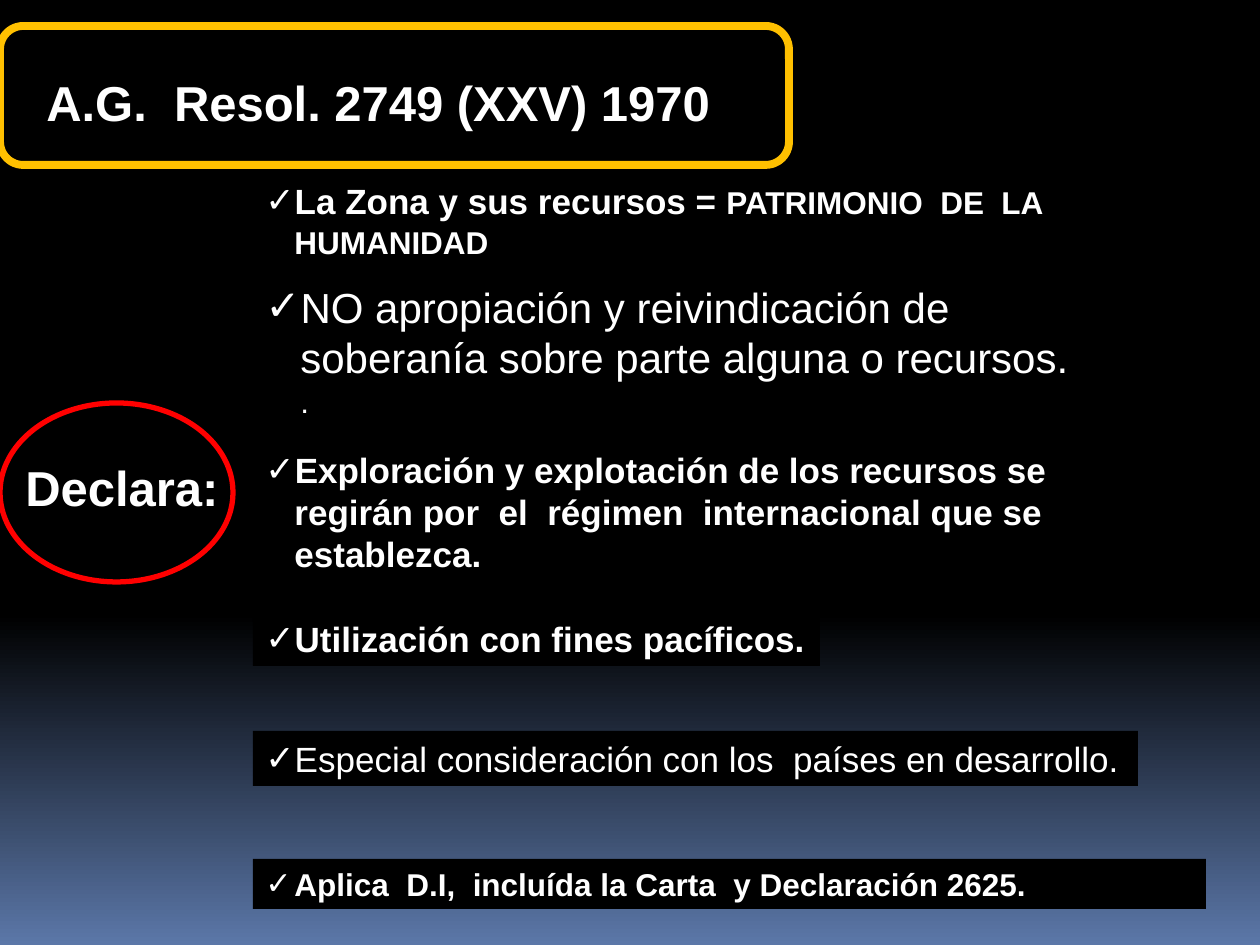
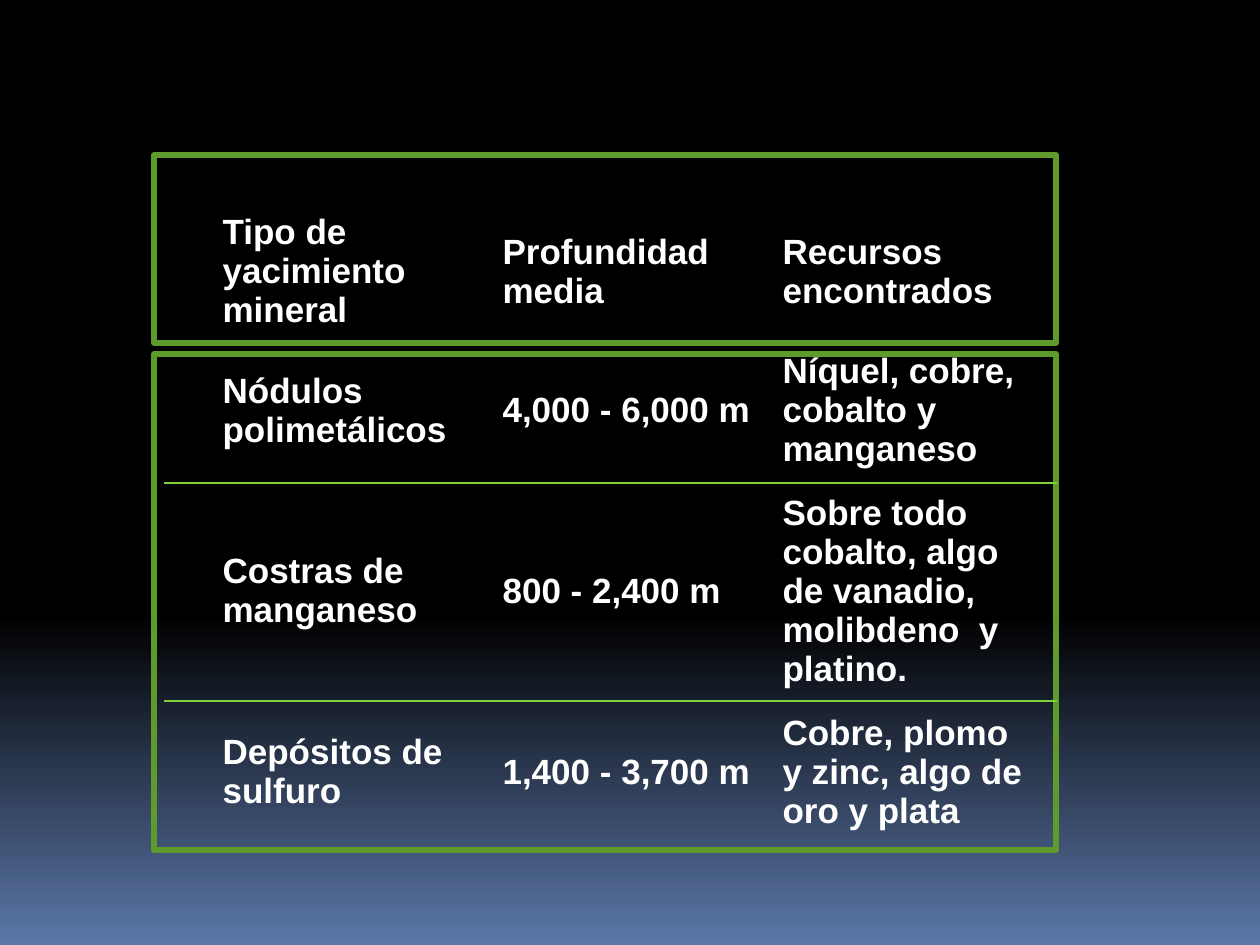
from lxml import etree
from pptx import Presentation
from pptx.dml.color import RGBColor
from pptx.enum.shapes import MSO_CONNECTOR, MSO_SHAPE
from pptx.enum.text import MSO_ANCHOR, PP_ALIGN
from pptx.oxml.ns import qn
from pptx.util import Emu, Pt

# Shared look
BLACK = RGBColor(0x00, 0x00, 0x00)
WHITE = RGBColor(0xFF, 0xFF, 0xFF)
HORIZON_BLUE = RGBColor(0x5B, 0x77, 0xA8)
GOLD = RGBColor(0xFF, 0xC0, 0x00)
RED = RGBColor(0xFF, 0x00, 0x00)
FRAME_GREEN = RGBColor(0x5E, 0x9B, 0x2C)
RULE_GREEN = RGBColor(0x7F, 0xD1, 0x3B)
FONT = "Arial"
LEFT, MIDDLE, TOP = PP_ALIGN.LEFT, MSO_ANCHOR.MIDDLE, MSO_ANCHOR.TOP
RECT, ROUNDED, OVAL = MSO_SHAPE.RECTANGLE, MSO_SHAPE.ROUNDED_RECTANGLE, MSO_SHAPE.OVAL
STRAIGHT = MSO_CONNECTOR.STRAIGHT
PX_PER_INCH = 126
LINE_HEIGHT = 1.2
NO_TABLE_STYLE = "{2D5ABB26-0587-4C30-8999-92F81FD0307C}"

# Content: box, paragraphs as lists of (text, size), then format
STATEMENT_LEFT = 253
STATEMENTS = [
    ((175, 980, 92), [[("La Zona y sus recursos = ", 20),
                       ("PATRIMONIO  DE  LA  HUMANIDAD", 18)]], {}),
    ((275, 1007, 152), [[("NO apropiación y reivindicación de", 24)],
                        [("soberanía sobre parte alguna o recursos.", 24)],
                        [(".", 18)]], {"bold": False, "indent": 35}),
    ((442, 853, 140), [[("Exploración y explotación de los recursos se", 20)],
                       [("regirán por  el  régimen  internacional que se", 20)],
                       [("establezca.", 20)]], {"fill": BLACK}),
    ((611, 567, 55), [[("Utilización con fines pacíficos.", 20)]], {"fill": BLACK}),
    ((731, 885, 55), [[("Especial consideración con los  países en desarrollo.", 20)]],
     {"bold": False, "fill": BLACK}),
    ((859, 953, 50), [[("Aplica  D.I,  incluída la Carta  y Declaración 2625.", 18)]],
     {"fill": BLACK}),
]
DEPOSITS = [
    ("Tipo de yacimiento mineral", "Profundidad media", "Recursos encontrados"),
    ("Nódulos polimetálicos", "4,000 - 6,000 m", "Níquel, cobre, cobalto y manganeso"),
    ("Costras de manganeso", "800 - 2,400 m",
     "Sobre todo cobalto, algo de vanadio, molibdeno  y platino."),
    ("Depósitos de sulfuro", "1,400 - 3,700 m", "Cobre, plomo y zinc, algo de oro y plata"),
]
ROW_HEIGHTS = (139, 138, 223, 139)
COLUMN_WIDTH = 280


def px(length):
    return Emu(round(length * 914400 / PX_PER_INCH))


def px_all(*lengths):
    return [px(length) for length in lengths]


def write(paragraph, runs, bold=True, color=WHITE, indent=0, bullet=False, spacing=None):
    """Fill a paragraph with (text, size) runs."""
    paragraph.alignment = LEFT
    if spacing:
        paragraph.line_spacing = Pt(spacing)
    for text, size in runs:
        run = paragraph.add_run()
        run.text = text
        run.font.name = FONT
        run.font.size = Pt(size)
        run.font.bold = bold
        run.font.color.rgb = color
    properties = paragraph._p.get_or_add_pPr()
    properties.set("marL", str(px(indent)))
    properties.set("indent", str(-px(indent) if bullet else 0))
    if bullet:
        etree.SubElement(properties, qn("a:buFont")).set("typeface", FONT)
        etree.SubElement(properties, qn("a:buChar")).set("char", "✓")


def add_label(slide, box, text, size, indent=0, spacing=None):
    frame = slide.shapes.add_textbox(*px_all(*box)).text_frame
    frame.word_wrap = True
    write(frame.paragraphs[0], [(text, size)], indent=indent,
          spacing=spacing or size * LINE_HEIGHT)


def add_statement(slide, box, paragraphs, bold=True, indent=29, fill=None):
    """A checked statement; only its first paragraph carries the tick."""
    top, width, height = box
    place = px_all(STATEMENT_LEFT, top, width, height)
    if fill is None:
        statement = slide.shapes.add_textbox(*place)
    else:
        statement = slide.shapes.add_shape(RECT, *place)
        statement.shadow.inherit = False
        statement.fill.solid()
        statement.fill.fore_color.rgb = fill
        statement.line.fill.background()
    frame = statement.text_frame
    frame.word_wrap = True
    frame.vertical_anchor = TOP
    for number, runs in enumerate(paragraphs):
        paragraph = frame.add_paragraph() if number else frame.paragraphs[0]
        mean_size = sum(size for _, size in runs) / len(runs)
        write(paragraph, runs, bold=bold, indent=indent, bullet=number == 0,
              spacing=round(mean_size * LINE_HEIGHT, 1))


def add_outline(slide, kind, box, color, weight):
    outline = slide.shapes.add_shape(kind, *px_all(*box))
    outline.shadow.inherit = False
    outline.fill.background()
    outline.line.color.rgb = color
    outline.line.width = Pt(weight)


def add_rule(slide, left, right, y):
    rule = slide.shapes.add_connector(STRAIGHT, *px_all(left, y, right, y))
    rule.line.color.rgb = RULE_GREEN
    rule.line.width = Pt(0.94)
    etree.SubElement(rule._element.spPr, qn("a:effectLst"))


def add_deposit_table(slide, left, top):
    columns = len(DEPOSITS[0])
    table = slide.shapes.add_table(
        len(DEPOSITS), columns,
        *px_all(left, top, COLUMN_WIDTH * columns, sum(ROW_HEIGHTS))).table
    table.first_row = table.horz_banding = False
    table._tbl.tblPr.find(qn("a:tableStyleId")).text = NO_TABLE_STYLE
    for column in table.columns:
        column.width = px(COLUMN_WIDTH)
    for row, height, texts in zip(table.rows, ROW_HEIGHTS, DEPOSITS):
        row.height = px(height)
        for cell, text in zip(row.cells, texts):
            cell.fill.background()
            cell.vertical_anchor = MIDDLE
            write(cell.text_frame.paragraphs[0], [(text, 20)])


def set_background(master):
    """Black down to 65 %, then fading to blue at the foot."""
    fill = master.background.fill
    fill.gradient()
    fill.gradient_angle = 270
    for stop, position, color in zip(fill.gradient_stops, (0.65, 1), (BLACK, HORIZON_BLUE)):
        stop.position = position
        stop.color.rgb = color


def build_resolution(slide):
    add_label(slide, (34, 66, 784, 72), "A.G.  Resol. 2749 (XXV) 1970", 28)
    add_label(slide, (0, 442, 251, 81), "Declara:", 28, indent=13, spacing=39)
    for box, paragraphs, style in STATEMENTS:
        add_statement(slide, box, paragraphs, **style)
    add_outline(slide, ROUNDED, (0, 26, 789, 139), GOLD, 4.5)
    add_outline(slide, OVAL, (0, 403, 233, 179), RED, 3)


def build_deposits(slide):
    add_deposit_table(slide, 210, 202)
    # Frames round the heading and the body
    for top, height in ((155, 188), (354, 496)):
        add_outline(slide, RECT, (154, top, 902, height), FRAME_GREEN, 3)
    # Rules between the deposits
    for y in (483, 701):
        add_rule(slide, 164, 1057, y)


def main():
    prs = Presentation()
    prs.slide_width, prs.slide_height = px_all(1260, 945)
    set_background(prs.slide_master)
    blank = prs.slide_layouts[6]
    for build in (build_resolution, build_deposits):
        build(prs.slides.add_slide(blank))
    prs.save("out.pptx")


if __name__ == "__main__":
    main()
